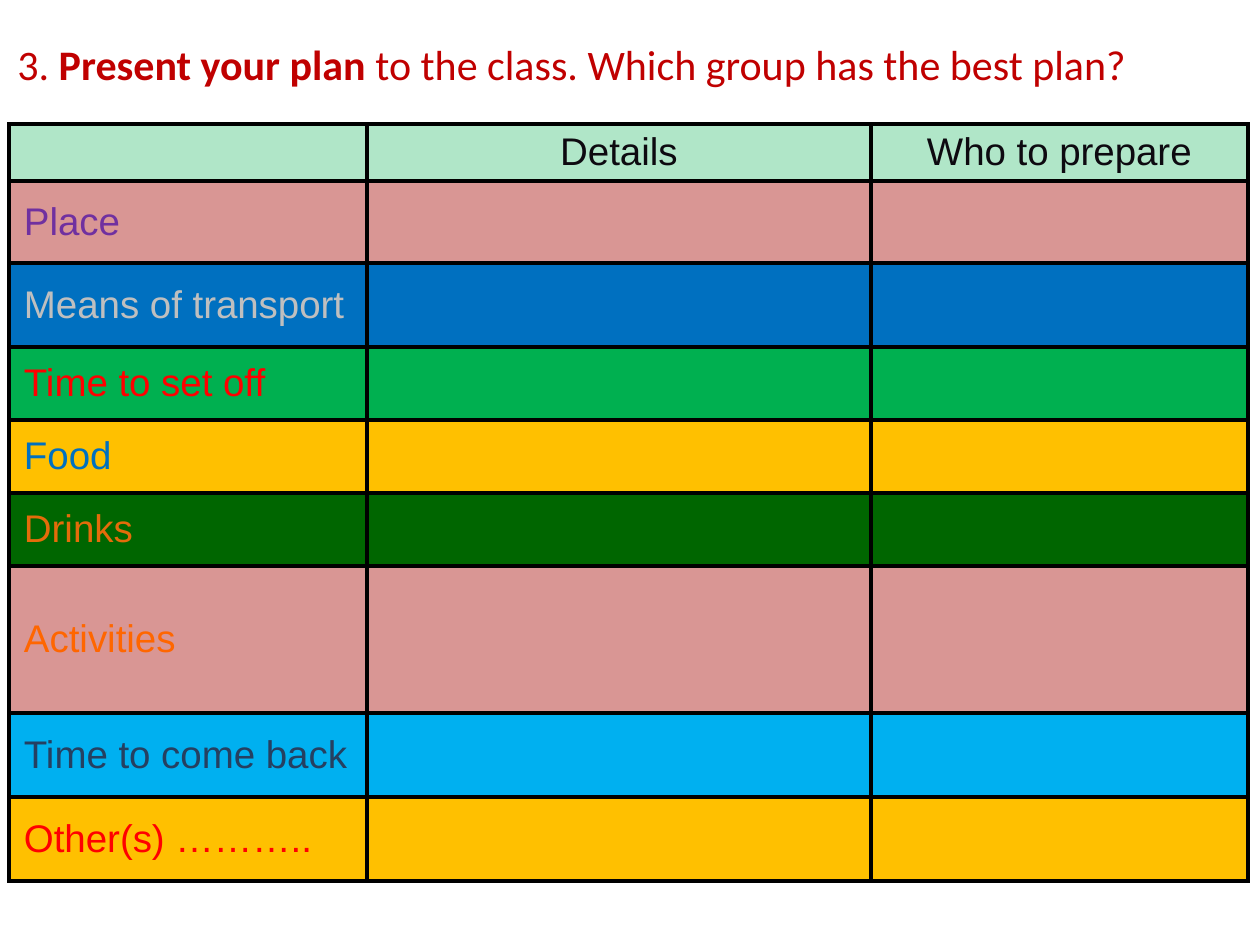
"""Build a slide with a trip planning table to present to the class."""
from lxml import etree
from pptx import Presentation
from pptx.dml.color import RGBColor
from pptx.enum.text import MSO_ANCHOR, MSO_AUTO_SIZE, PP_ALIGN
from pptx.oxml import parse_xml
from pptx.oxml.ns import nsdecls, qn
from pptx.util import Emu, Pt

MIDDLE = MSO_ANCHOR.MIDDLE
GROW = MSO_AUTO_SIZE.SHAPE_TO_FIT_TEXT
CENTER, LEFT, JUSTIFY = PP_ALIGN.CENTER, PP_ALIGN.LEFT, PP_ALIGN.JUSTIFY

THEME = {
    "title": "C00000", "head": "0D0A10", "line": "000000",
    "rose": "D99694", "blue": "0070C0", "green": "00B050", "gold": "FFC000",
    "forest": "006600", "sky": "00B0F0", "purple": "7030A0", "gray": "BFBFBF",
    "red": "FF0000", "rust": "E46C0A", "orange": "FF6600", "navy": "254061",
    "title_font": "Calibri", "title_size": 24,
    "table_font": "Arial", "table_size": 22,
    "border": 2.25, "after": 6, "tint": 31000,
}
COLS = [358, 504, 377]
ROWS = [
    (57, "green", "head", ["", "Details", "Who to prepare"]),
    (82, "rose", "purple", ["Place", "", ""]),
    (84, "blue", "gray", ["Means of transport", "", ""]),
    (73, "green", "red", ["Time to set off", "", ""]),
    (73, "gold", "blue", ["Food", "", ""]),
    (73, "forest", "rust", ["Drinks", "", ""]),
    (147, "rose", "orange", ["Activities", "", ""]),
    (84, "sky", "navy", ["Time to come back", "", ""]),
    (84, "gold", "red", ["Other(s) ………..", "", ""]),
]


def px(num):
    return Emu(round(num * 914400 / 126))


def add_run(para, text, kind, color, bold=False):
    run = para.add_run()
    run.text = text
    run.font.name = THEME[kind + "_font"]
    run.font.size = Pt(THEME[kind + "_size"])
    run.font.bold = bold
    run.font.color.rgb = RGBColor.from_string(THEME[color])


deck = Presentation()
deck.slide_width, deck.slide_height = px(1260), px(945)
slide = deck.slides.add_slide(deck.slide_layouts[6])

high = sum(row[0] for row in ROWS)
frame = slide.shapes.add_table(
    len(ROWS), len(COLS), px(9), px(124), px(sum(COLS)), px(high))
table = frame.table
for col, width in zip(table.columns, COLS):
    col.width = px(width)

for r, (height, fill, color, words) in enumerate(ROWS):
    table.rows[r].height = px(height)
    for c, word in enumerate(words):
        cell = table.cell(r, c)
        cell.vertical_anchor = MIDDLE
        cell.margin_left = cell.margin_right = px(15)
        cell.margin_top = cell.margin_bottom = px(5)
        props = cell._tc.get_or_add_tcPr()
        for side in "LRTB":
            props.append(parse_xml(
                f'<a:ln{side} {nsdecls("a")} w="{Pt(THEME["border"])}"><a:solidFill>'
                f'<a:srgbClr val="{THEME["line"]}"/></a:solidFill></a:ln{side}>'))
        cell.fill.solid()
        cell.fill.fore_color.rgb = RGBColor.from_string(THEME[fill])
        if r == 0:
            tone = props.find(qn("a:solidFill")).find(qn("a:srgbClr"))
            etree.SubElement(tone, qn("a:alpha"), val=str(THEME["tint"]))
        if word:
            para = cell.text_frame.paragraphs[0]
            para.alignment = CENTER if r == 0 else LEFT
            para.space_after = Pt(THEME["after"])
            add_run(para, word, "table", color)

box = slide.shapes.add_textbox(px(5), px(32), px(1149), px(64))
box.text_frame.word_wrap = True
box.text_frame.auto_size = GROW
para = box.text_frame.paragraphs[0]
para.alignment = JUSTIFY
for text, bold in [
    ("3. ", False),
    ("Present your plan ", True),
    ("to the class. Which group has the best plan?", False),
]:
    add_run(para, text, "title", "title", bold)

deck.save("out.pptx")
